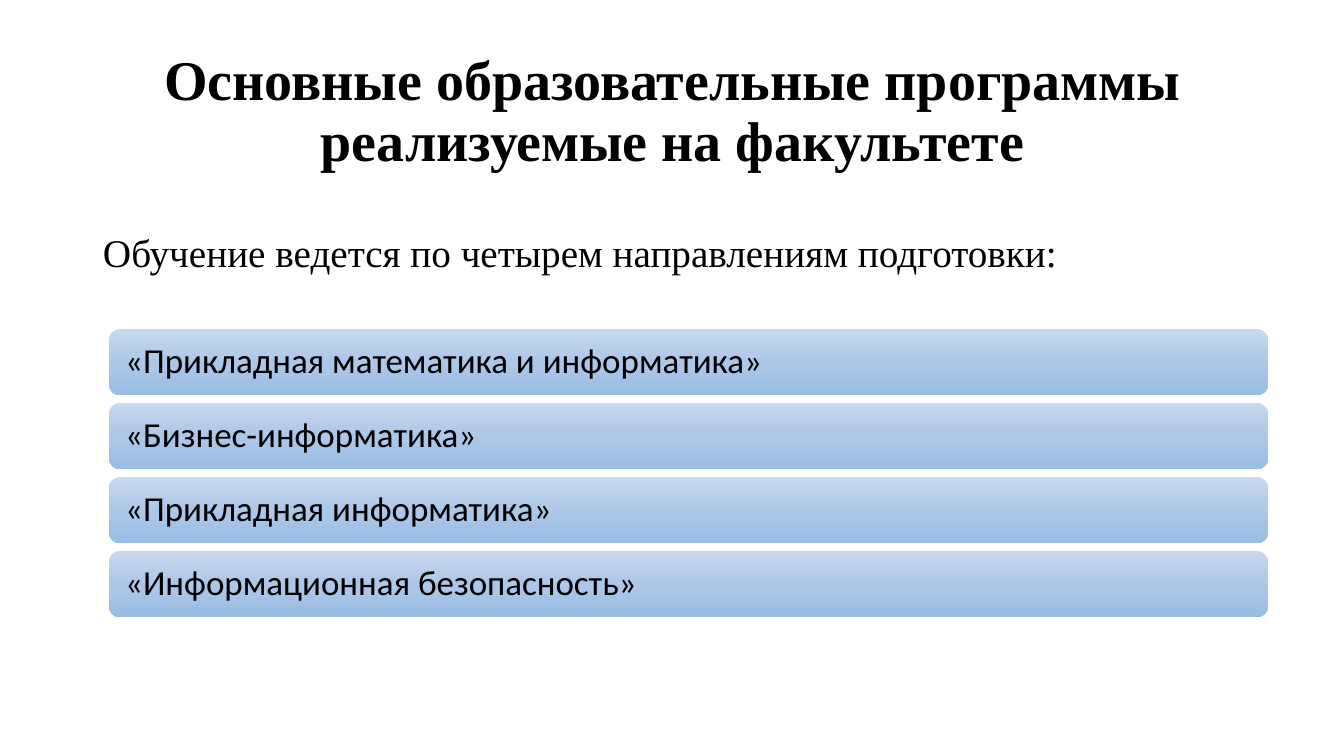
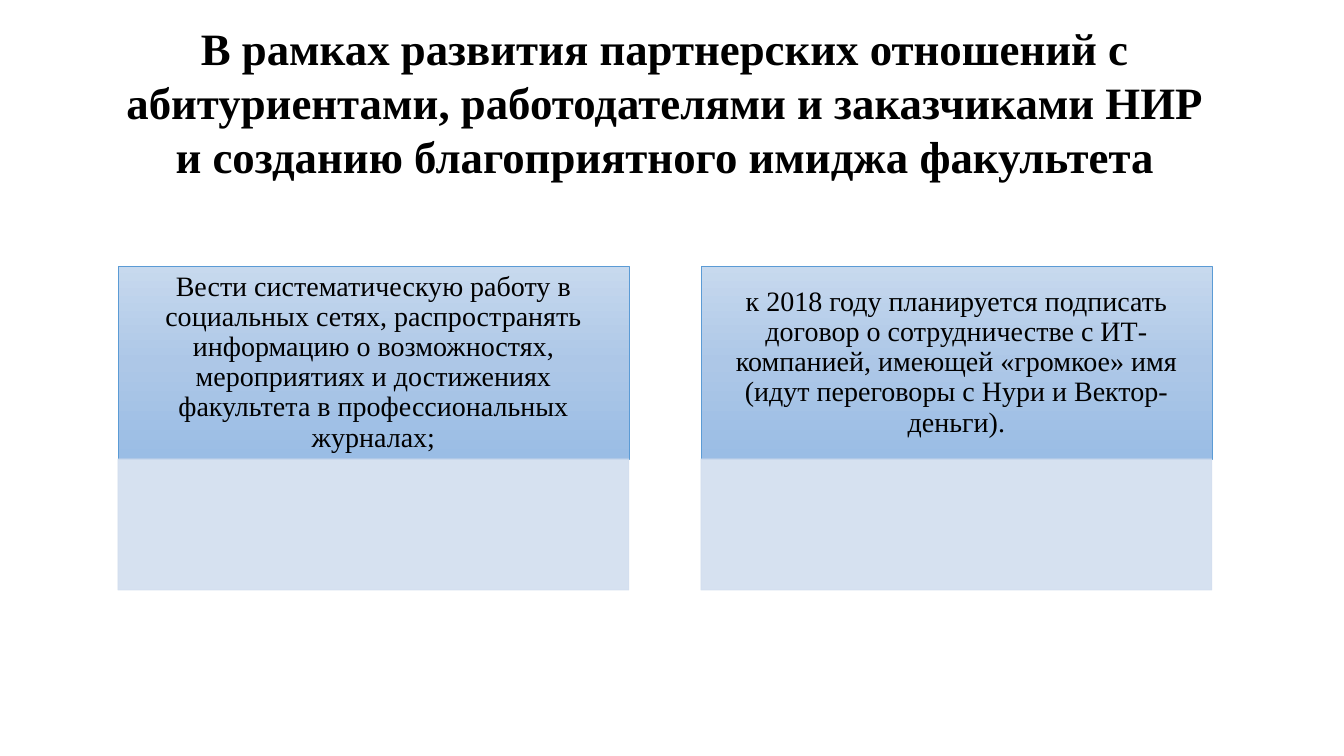
"""Build two slides about the programmes and partnerships of a faculty."""
from copy import deepcopy

from lxml.etree import SubElement
from pptx import Presentation
from pptx.dml.color import RGBColor
from pptx.enum.shapes import MSO_SHAPE
from pptx.enum.text import MSO_ANCHOR, PP_ALIGN
from pptx.oxml.ns import qn
from pptx.util import Pt

PX = 12192000 / 1344
COLORS = {
    "text": "000000",
    "grad_top": "C7D9EE",
    "grad_mid": "ADC7E7",
    "grad_end": "9ABDE5",
    "border": "5B9BD5",
    "panel": "D2DEEF",
}
SERIF, SANS = "Times New Roman", "Calibri"


def px(n):
    return round(n * PX)


def rgb(name):
    return RGBColor.from_string(COLORS[name])


class Deck:
    def __init__(self):
        self.prs = Presentation()
        self.prs.slide_width, self.prs.slide_height = px(1344), px(756)
        self.s = None

    def slide(self):
        self.s = self.prs.slides.add_slide(self.prs.slide_layouts[6])

    def label(self, sp, text, size, font=SERIF, bold=False, align=PP_ALIGN.LEFT,
              anchor=MSO_ANCHOR.MIDDLE, spacing=0.9, before=0, inset=(10, 5)):
        tf = sp.text_frame
        p = tf.paragraphs[0]
        r = p.add_run()
        r.text = text
        dx, dy = map(px, inset)
        formats = (
            (tf, {"word_wrap": True, "vertical_anchor": anchor,
                  "margin_left": dx, "margin_right": dx,
                  "margin_top": dy, "margin_bottom": dy}),
            (p, {"alignment": align, "line_spacing": spacing,
                 "space_before": Pt(before)}),
            (r.font, {"name": font, "size": Pt(size), "bold": bold}),
        )
        for obj, values in formats:
            for key, value in values.items():
                setattr(obj, key, value)
        r.font.color.rgb = rgb("text")

    def text(self, box, text, size, **style):
        sp = self.s.shapes.add_textbox(*map(px, box))
        self.label(sp, text, size, **style)

    def title(self, box, text, size, **style):
        self.text(box, text, size, bold=True, align=PP_ALIGN.CENTER, **style)

    def shape(self, kind, box, border=None):
        sp = self.s.shapes.add_shape(kind, *map(px, box))
        sp.shadow.inherit = False
        if border:
            sp.line.color.rgb = rgb(border)
            sp.line.width = Pt(0.5)
        else:
            sp.line.fill.background()
        return sp

    def gradient(self, kind, box, border=None):
        sp = self.shape(kind, box, border)
        sp.fill.gradient()
        stops = sp.element.find(".//" + qn("a:gsLst"))
        stops.append(deepcopy(stops[-1]))
        names = ("grad_top", "grad_mid", "grad_end")
        for i, (stop, name) in enumerate(zip(sp.fill.gradient_stops, names)):
            stop.color.rgb = rgb(name)
            stop.position = i / 2
        sp.fill.gradient_angle = 270
        return sp

    def bar(self, box, text):
        sp = self.gradient(MSO_SHAPE.ROUNDED_RECTANGLE, box)
        self.label(sp, text, 25, font=SANS, inset=(13, 13))

    def card(self, box, text):
        sp = self.gradient(MSO_SHAPE.RECTANGLE, box, "border")
        self.label(sp, text, 20, align=PP_ALIGN.CENTER, inset=(16, 9))

    def panel(self, box):
        sp = self.shape(MSO_SHAPE.RECTANGLE, box, "panel")
        sp.fill.solid()
        sp.fill.fore_color.rgb = rgb("panel")
        for color in sp.element.spPr.iter(qn("a:srgbClr")):
            SubElement(color, qn("a:alpha"), val="90000")


def programmes(deck):
    deck.slide()
    deck.title((93, 40, 1159, 146),
               "Основные образовательные программы реализуемые на факультете", 40)
    deck.text((93, 229, 1159, 69),
              "Обучение ведется по четырем направлениям подготовки:", 28,
              anchor=MSO_ANCHOR.TOP, before=10)
    names = ("«Прикладная математика и информатика»", "«Бизнес-информатика»",
             "«Прикладная информатика»", "«Информационная безопасность»")
    for i, name in enumerate(names):
        deck.bar((109, 329 + 74 * i, 1159, 66), name)


def partnerships(deck):
    deck.slide()
    goals = (
        "Вести систематическую работу в социальных сетях, распространять "
        "информацию о возможностях, мероприятиях и достижениях факультета "
        "в профессиональных журналах;",
        "к 2018 году планируется подписать договор о сотрудничестве с "
        "ИТ-компанией, имеющей «громкое» имя (идут переговоры с Нури и "
        "Вектор-деньги).",
    )
    for i, goal in enumerate(goals):
        x = 118 + 583 * i
        deck.card((x, 266, 511, 193), goal)
        deck.panel((x, 459, 511, 131))
    deck.title((101, 16, 1128, 173),
               "В рамках развития партнерских отношений с абитуриентами, "
               "работодателями и заказчиками НИР и созданию благоприятного "
               "имиджа факультета", 32, anchor=MSO_ANCHOR.TOP, spacing=1.0)


def main():
    deck = Deck()
    programmes(deck)
    partnerships(deck)
    deck.prs.save("out.pptx")


if __name__ == "__main__":
    main()
